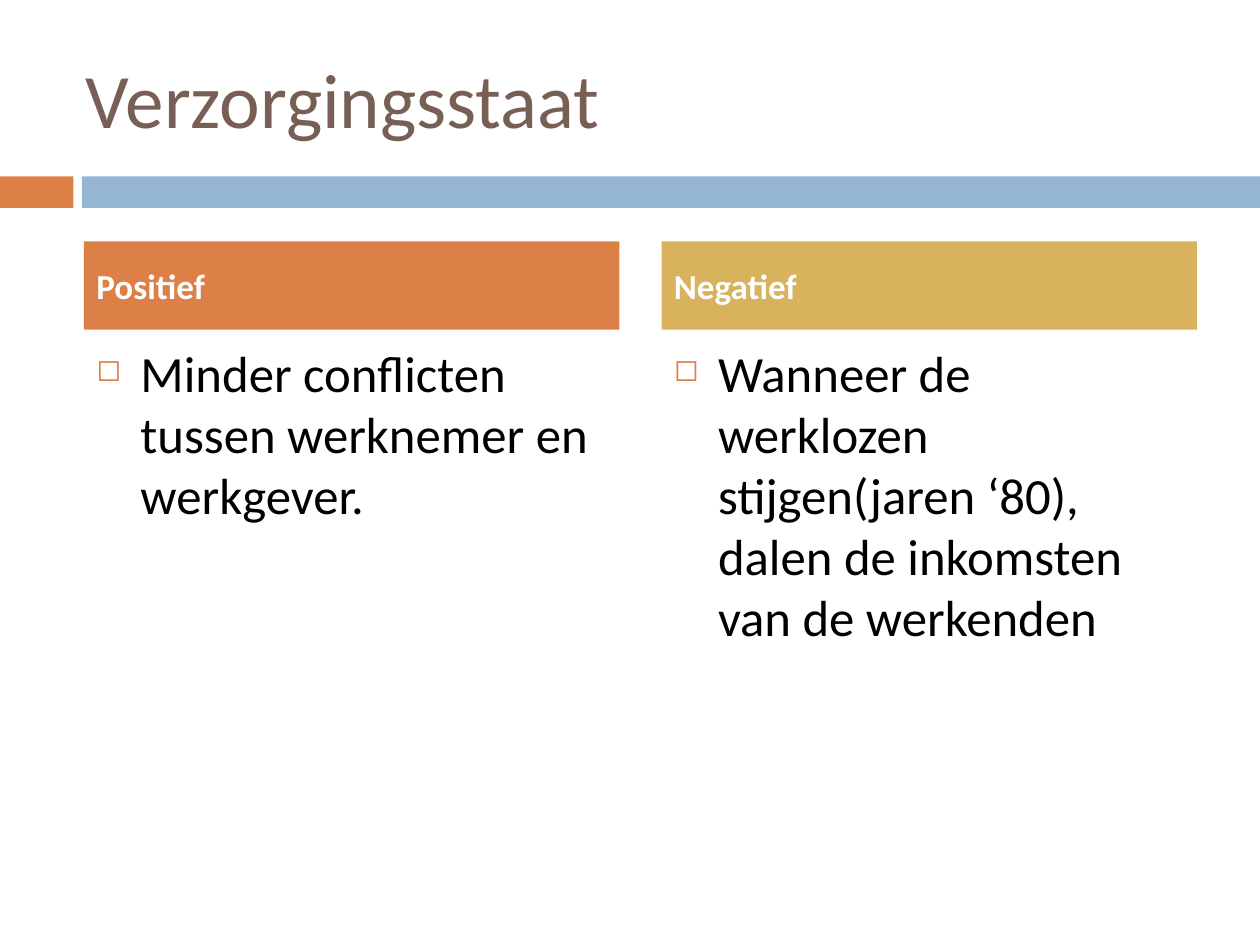
from lxml.etree import SubElement
from pptx import Presentation
from pptx.dml.color import RGBColor
from pptx.enum.shapes import MSO_SHAPE as Shape
from pptx.enum.text import MSO_ANCHOR as Anchor, PP_ALIGN as Align
from pptx.oxml.ns import qn
from pptx.util import Pt

ORANGE = RGBColor(0xDD, 0x80, 0x47)
BLUE = RGBColor(0x94, 0xB6, 0xD2)
GOLD = RGBColor(0xD8, 0xB2, 0x5C)
BROWN = RGBColor(0x77, 0x5F, 0x55)
WHITE = RGBColor(0xFF, 0xFF, 0xFF)
BLACK = RGBColor(0, 0, 0)

TITLE = "Verzorgingsstaat"
COLUMNS = [
    ("Positief", ORANGE, "Minder conflicten tussen werknemer en werkgever."),
    ("Negatief", GOLD, "Wanneer de werklozen stijgen(jaren ‘80), "
                       "dalen de inkomsten van de werkenden"),
]
BANDS = [(0, 42, ORANGE), (46.8, 673.2, BLUE)]

TITLE_FONT = {"name": "Calibri", "size": Pt(44)}
HEADING_FONT = {"name": "Calibri", "size": Pt(20), "bold": True}
BODY_FONT = {"name": "Calibri", "size": Pt(29)}

WIDTH, HEIGHT = 720, 540
BAND_TOP, BAND_HEIGHT = 100.8, 18
COLUMN_LEFT, COLUMN_WIDTH, COLUMN_STEP = 48, 306, 330
HEADING_TOP, HEADING_HEIGHT = 138, 50.4
BODY_TOP, BODY_HEIGHT = 192, 282
INDENT = 25.2


def add_block(slide, left, top, width, height, color):
    block = slide.shapes.add_shape(
        Shape.RECTANGLE, Pt(left), Pt(top), Pt(width), Pt(height))
    block.shadow.inherit = False
    block.fill.solid()
    block.fill.fore_color.rgb = color
    block.line.fill.background()
    return block


def add_text(slide, left, top, width, height):
    return slide.shapes.add_textbox(Pt(left), Pt(top), Pt(width), Pt(height))


def write(holder, text, font, color, anchor, before=0):
    frame = holder.text_frame
    frame.word_wrap = True
    frame.vertical_anchor = anchor
    paragraph = frame.paragraphs[0]
    paragraph.alignment = Align.LEFT
    paragraph.space_before = Pt(before)
    run = paragraph.add_run()
    run.text = text
    for key, value in font.items():
        setattr(run.font, key, value)
    run.font.color.rgb = color
    return paragraph


def add_bullet(paragraph):
    properties = paragraph._p.get_or_add_pPr()
    properties.set("marL", str(Pt(INDENT)))
    properties.set("indent", str(-Pt(INDENT)))
    bullet_color = SubElement(properties, qn("a:buClr"))
    SubElement(bullet_color, qn("a:srgbClr"), val=str(ORANGE))
    SubElement(properties, qn("a:buSzPct"), val="60000")
    SubElement(properties, qn("a:buChar"), char="◻")


def main():
    deck = Presentation()
    deck.slide_width, deck.slide_height = Pt(WIDTH), Pt(HEIGHT)
    slide = deck.slides.add_slide(deck.slide_layouts[6])

    for left, width, color in BANDS:
        add_block(slide, left, BAND_TOP, width, BAND_HEIGHT, color)

    title = add_text(slide, 42, 21.6, 642, 68.4)
    write(title, TITLE, TITLE_FONT, BROWN, Anchor.MIDDLE)

    for index, (heading, color, point) in enumerate(COLUMNS):
        left = COLUMN_LEFT + index * COLUMN_STEP
        body = add_text(slide, left, BODY_TOP, COLUMN_WIDTH, BODY_HEIGHT)
        add_bullet(write(body, point, BODY_FONT, BLACK, Anchor.TOP, 7))
        header = add_block(
            slide, left, HEADING_TOP, COLUMN_WIDTH, HEADING_HEIGHT, color)
        write(header, heading, HEADING_FONT, WHITE, Anchor.MIDDLE, 7)

    deck.save("out.pptx")


if __name__ == "__main__":
    main()
